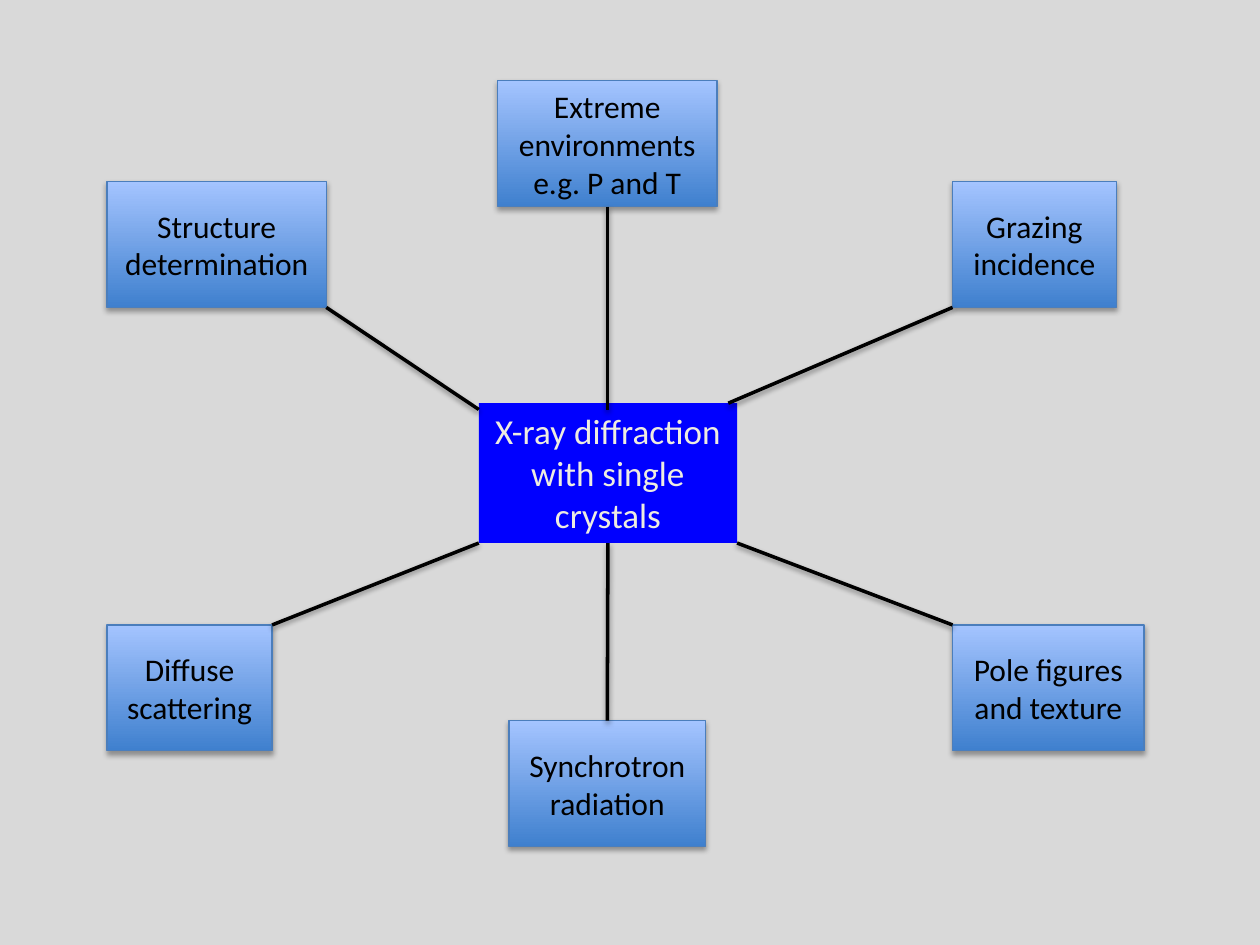
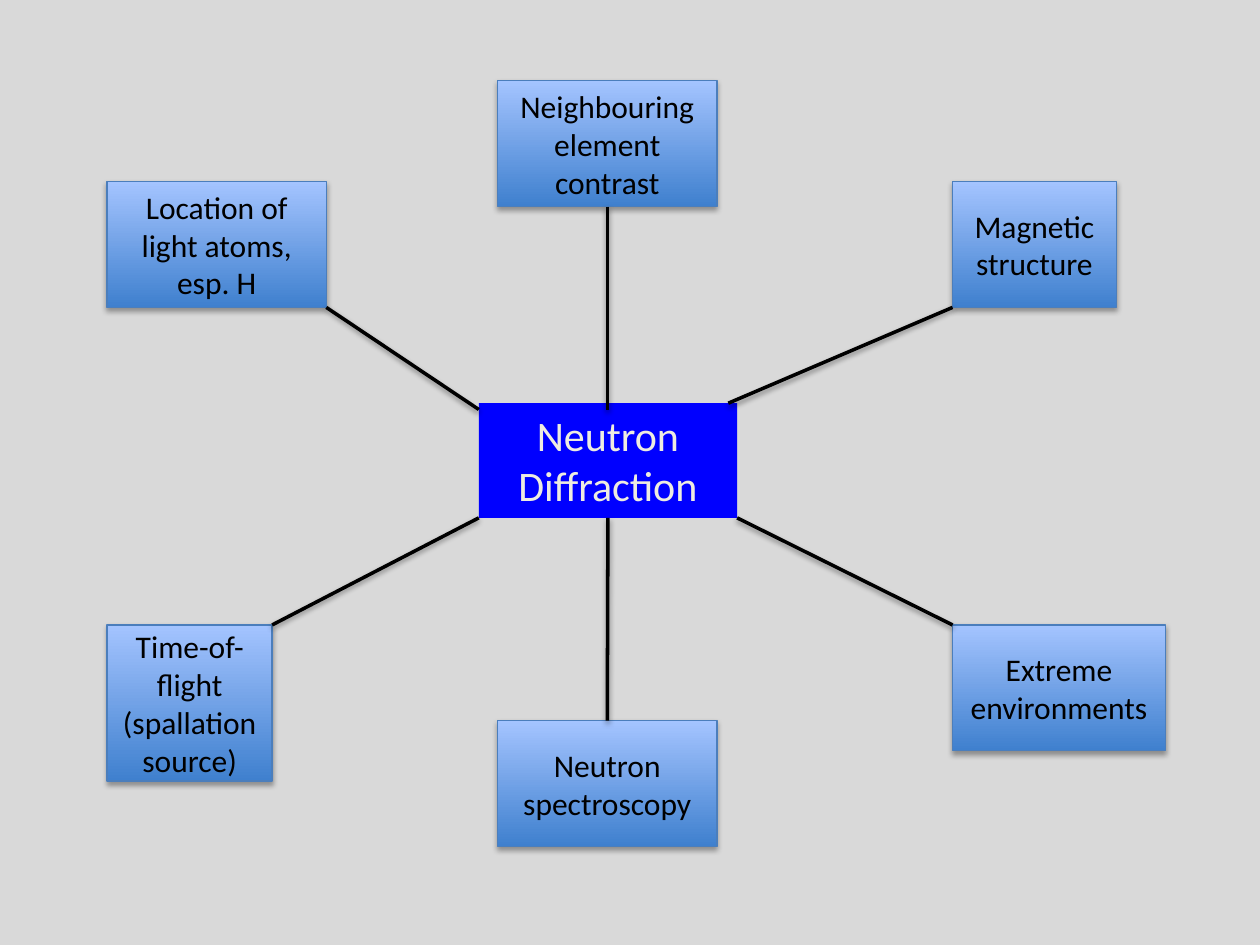
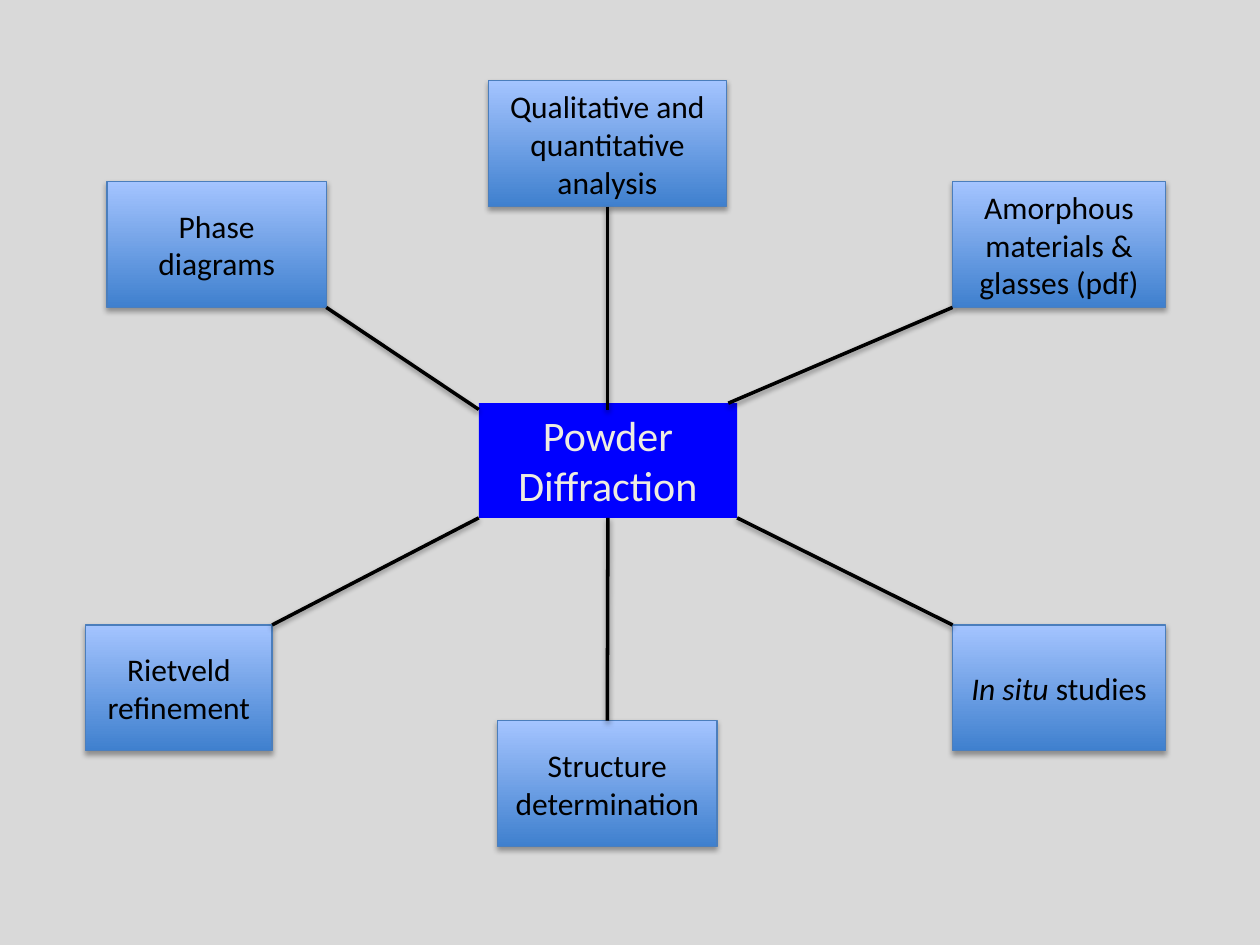
from dataclasses import dataclass

from lxml.etree import SubElement
from pptx import Presentation
from pptx.dml.color import RGBColor
from pptx.enum.shapes import MSO_CONNECTOR, MSO_SHAPE
from pptx.enum.text import MSO_ANCHOR, MSO_AUTO_SIZE, PP_ALIGN
from pptx.oxml.ns import qn
from pptx.util import Inches, Pt

# Content: a topic is (paragraphs, box width, box height);
# a paragraph is a string or a list of (text, italic) runs.
MAPS = [
    {
        "hub": (["X-ray diffraction", "with single", "crystals"], 20, 1.11),
        "top_left": (["Structure", "determination"], 1.74, 1),
        "top_right": (["Grazing incidence"], 1.3, 1),
        "bottom": (["Synchrotron radiation"], 1.56, 1),
        "bottom_right": (["Pole figures and texture"], 1.52, 1),
        "top": (["Extreme environments", "e.g. P and T"], 1.74, 1),
        "bottom_left": (["Diffuse scattering"], 1.31, 1),
    },
    {
        "hub": (["Neutron Diffraction"], 24, 0.91),
        "top_left": (["Location of light atoms, esp. H"], 1.74, 1),
        "top_right": (["Magnetic structure"], 1.3, 1),
        "bottom": (["Neutron spectroscopy"], 1.74, 1),
        "bottom_right": (["Extreme environments"], 1.69, 1),
        "top": (["Neighbouring element contrast"], 1.74, 1),
        "bottom_left": (["Time-of-flight (spallation source)"], 1.31, 1.24),
    },
    {
        "hub": (["Powder Diffraction"], 24, 0.91),
        "top_left": (["Phase diagrams"], 1.74, 1),
        "top_right": (["Amorphous materials & glasses (pdf)"], 1.69, 1),
        "bottom": (["Structure determination"], 1.74, 1),
        "bottom_right": ([[("In situ ", True), ("studies", False)]], 1.69, 1),
        "top": (["Qualitative and quantitative analysis"], 1.89, 1),
        "bottom_left": (["Rietveld refinement"], 1.48, 1),
    },
]

# Layout: each slot fixes one x of its box, the share of the width
# lying left of that x, and the top of the box.
CENTER_X = 4.82
HUB_LEFT, HUB_TOP, HUB_WIDTH = 3.8, 3.2, 2.05
HUB_RIGHT = HUB_LEFT + HUB_WIDTH
SLOTS = {
    "top_left": (2.59, 1, 1.44),
    "top_right": (7.56, 0, 1.44),
    "bottom": (CENTER_X, 0.5, 5.72),
    "bottom_right": (7.56, 0, 4.96),
    "top": (CENTER_X, 0.5, 0.64),
    "bottom_left": (2.16, 1, 4.96),
}


@dataclass(frozen=True)
class Theme:
    font: str = "Calibri"
    background: str = "D9D9D9"
    hub: str = "0000FF"
    hub_text: str = "EEECE1"
    box_low: str = "3F80CE"
    box_high: str = "A4C4FF"
    box_line: str = "4B7EBC"
    ink: str = "000000"
    topic_size: int = 18
    box_line_width: float = 0.75
    spoke_width: float = 2


THEME = Theme()


def rgb(value):
    return RGBColor.from_string(value)


def add_shadow(s, opacity, distance):
    """Give a shape or connector a soft shadow straight below it."""
    sp_pr = s._element.spPr
    effects = SubElement(sp_pr, qn("a:effectLst"))
    shadow = SubElement(effects, qn("a:outerShdw"), blurRad=str(Pt(3.1)),
                        dist=str(Pt(distance)), dir="5400000", rotWithShape="0")
    color = SubElement(shadow, qn("a:srgbClr"), val=THEME.ink)
    SubElement(color, qn("a:alpha"), val=str(opacity * 1000))


def write(s, paragraphs, *, size, color, anchor=MSO_ANCHOR.MIDDLE, grow=False):
    tf = s.text_frame
    tf.word_wrap = True
    tf.vertical_anchor = anchor
    if grow:
        tf.auto_size = MSO_AUTO_SIZE.SHAPE_TO_FIT_TEXT
    for i, runs in enumerate(paragraphs):
        p = tf.paragraphs[0] if i == 0 else tf.add_paragraph()
        p.alignment = PP_ALIGN.CENTER
        for text, italic in [(runs, False)] if isinstance(runs, str) else runs:
            r = p.add_run()
            r.text = text
            r.font.name = THEME.font
            r.font.size = Pt(size)
            r.font.italic = italic
            r.font.color.rgb = rgb(color)


def add_rect(slide, *bounds):
    return slide.shapes.add_shape(MSO_SHAPE.RECTANGLE, *map(Inches, bounds))


def add_topic(slide, slot, paragraphs, width, height):
    x, share, top = SLOTS[slot]
    s = add_rect(slide, x - share * width, top, width, height)
    s.fill.gradient()
    s.fill.gradient_angle = 90
    for stop, color, position in zip(s.fill.gradient_stops,
                                     (THEME.box_low, THEME.box_high), (0, 1)):
        stop.color.rgb = rgb(color)
        stop.position = position
    s.line.color.rgb = rgb(THEME.box_line)
    s.line.width = Pt(THEME.box_line_width)
    add_shadow(s, 35, 1.8)
    write(s, paragraphs, size=THEME.topic_size, color=THEME.ink)
    return s


def add_hub(slide, paragraphs, size, height):
    s = add_rect(slide, HUB_LEFT, HUB_TOP, HUB_WIDTH, height)
    s.shadow.inherit = False
    s.fill.solid()
    s.fill.fore_color.rgb = rgb(THEME.hub)
    s.line.fill.background()
    write(s, paragraphs, size=size, color=THEME.hub_text,
          anchor=MSO_ANCHOR.TOP, grow=True)
    return s


def add_spoke(slide, start, end):
    s = slide.shapes.add_connector(MSO_CONNECTOR.STRAIGHT,
                                   *map(Inches, start + end))
    s.line.color.rgb = rgb(THEME.ink)
    s.line.width = Pt(THEME.spoke_width)
    add_shadow(s, 38, 1.6)
    return s


def add_map(prs, content):
    slide = prs.slides.add_slide(prs.slide_layouts[6])
    boxes = {slot: add_topic(slide, slot, *content[slot]) for slot in SLOTS}
    hub = add_hub(slide, *content["hub"])

    # Spokes run from the box side that faces the hub
    hub_bottom = HUB_TOP + content["hub"][2]
    hub_ends = {
        "top_left": (HUB_LEFT, HUB_TOP + 0.05),
        "top_right": (HUB_RIGHT - 0.07, HUB_TOP),
        "bottom": (CENTER_X, hub_bottom),
        "bottom_right": (HUB_RIGHT, hub_bottom),
        "top": (CENTER_X, HUB_TOP + 0.05),
        "bottom_left": (HUB_LEFT, hub_bottom),
    }
    spokes = {}
    for slot, end in hub_ends.items():
        x, _, top = SLOTS[slot]
        y = top + content[slot][2] if slot.startswith("top") else top
        spokes[slot] = add_spoke(slide, (x, y), end)
    spokes["top"].begin_connect(boxes["top"], 2)
    spokes["bottom"].begin_connect(boxes["bottom"], 0)
    spokes["bottom"].end_connect(hub, 2)


def main():
    prs = Presentation()
    prs.slide_width, prs.slide_height = Inches(10), Inches(7.5)
    # Shared background
    fill = prs.slide_master.background.fill
    fill.solid()
    fill.fore_color.rgb = rgb(THEME.background)
    for content in MAPS:
        add_map(prs, content)
    prs.save("out.pptx")


if __name__ == "__main__":
    main()
